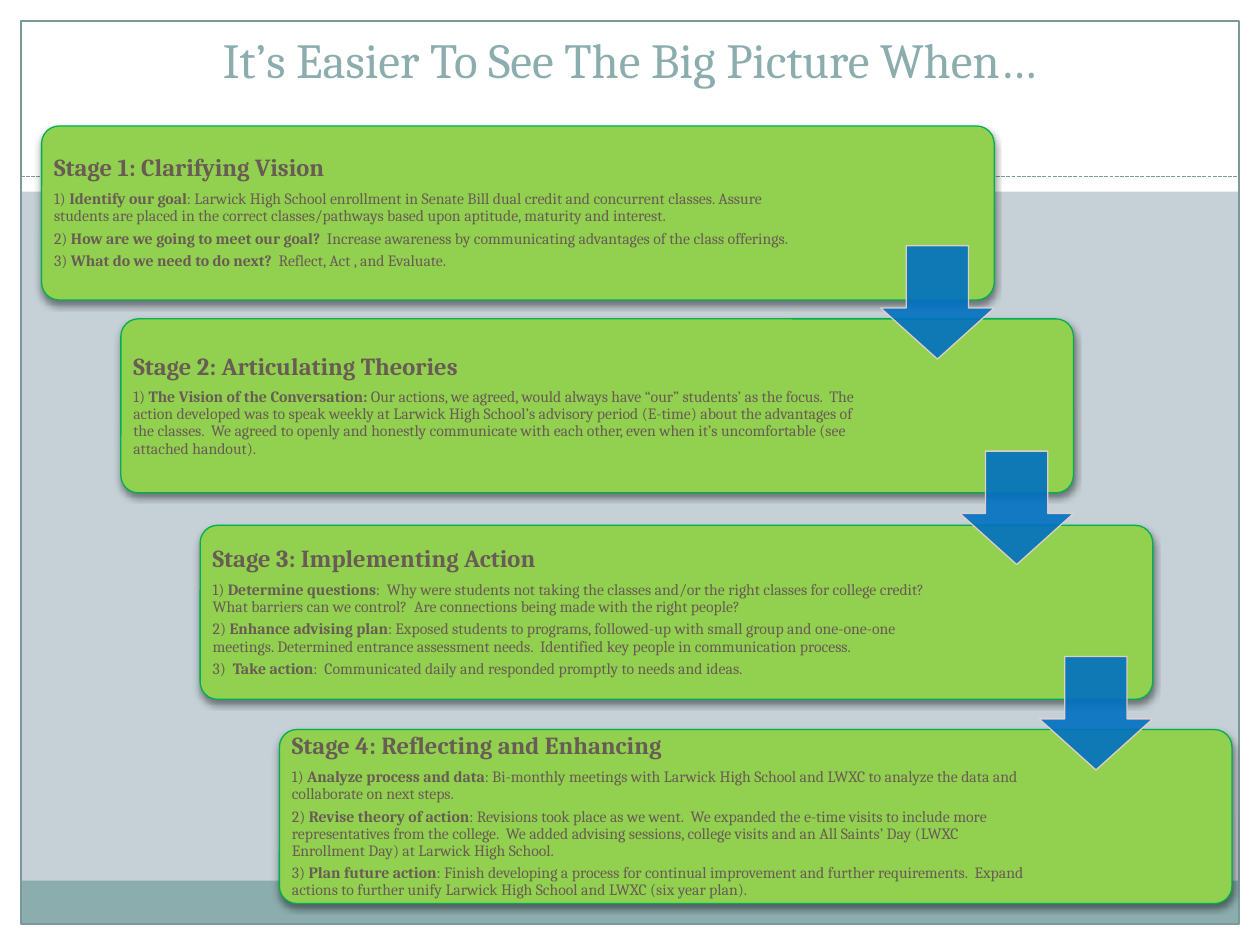
from dataclasses import dataclass

from lxml import etree
from pptx import Presentation
from pptx.dml.color import RGBColor
from pptx.enum import dml, shapes, text
from pptx.oxml import ns
from pptx.util import Pt


@dataclass(frozen=True)
class Theme:
    font: str = "Cambria"
    background: str = "C5D1D7"
    paper: str = "FFFFFF"
    accent: str = "8CADAE"
    frame: str = "7C999A"
    card: str = "92D050"
    card_edge: str = "00B050"
    arrow: str = "0070C0"
    arrow_edge: str = "EED3D0"
    ink: str = "695C54"
    shadow: str = "000000"
    title_size: float = 28
    heading_size: float = 14
    body_size: float = 9
    line_width: float = 0.75


def color(code):
    return RGBColor.from_string(code)


def add_span(para, words, *, font, size, ink, bold=False):
    span = para.add_run()
    span.text = words
    span.font.name = font
    span.font.size = Pt(size)
    span.font.bold = bold
    span.font.color.rgb = color(ink)


def child(parent, tag, **attributes):
    element = etree.SubElement(parent, ns.qn(tag))
    for name, value in attributes.items():
        element.set(name, str(value))
    return element


def set_alpha(fill_parent, percent):
    child(fill_parent.find(".//" + ns.qn("a:srgbClr")), "a:alpha", val=percent * 1000)


class SlideBuilder:
    def __init__(self, page, theme):
        self.page = page
        self.theme = theme
        page.background.fill.solid()
        page.background.fill.fore_color.rgb = color(theme.background)

    def shape(self, kind, left, top, width, height, fill=None, line=None):
        box = self.page.shapes.add_shape(kind, Pt(left), Pt(top), Pt(width), Pt(height))
        box.shadow.inherit = False
        if fill:
            box.fill.solid()
            box.fill.fore_color.rgb = color(fill)
        else:
            box.fill.background()
        if line:
            box.line.color.rgb = color(line)
            box.line.width = Pt(self.theme.line_width)
        else:
            box.line.fill.background()
        return box

    def panel(self, left, top, width, height, fill=None, line=None):
        return self.shape(shapes.MSO_SHAPE.RECTANGLE, left, top, width, height, fill, line)

    def rule(self, left, right, y):
        line = self.page.shapes.add_connector(
            shapes.MSO_CONNECTOR.STRAIGHT, Pt(left), Pt(y), Pt(right), Pt(y))
        line.line.color.rgb = color(self.theme.frame)
        line.line.width = Pt(self.theme.line_width)
        line.line.dash_style = dml.MSO_LINE.SQUARE_DOT
        child(line._element.spPr, "a:effectLst")

    def title(self, words, left, top, width, height):
        box = self.page.shapes.title
        box.left, box.top, box.width, box.height = Pt(left), Pt(top), Pt(width), Pt(height)
        frame = box.text_frame
        frame.auto_size = text.MSO_AUTO_SIZE.NONE
        frame.vertical_anchor = text.MSO_ANCHOR.BOTTOM
        para = frame.paragraphs[0]
        para.alignment = text.PP_ALIGN.CENTER
        add_span(para, words, font=self.theme.font, size=self.theme.title_size,
                 ink=self.theme.accent)
        box._element.getparent().append(box._element)

    def card(self, left, top, width, height):
        box = self.shape(shapes.MSO_SHAPE.ROUNDED_RECTANGLE, left, top, width, height,
                         self.theme.card, self.theme.card_edge)
        box.adjustments[0] = 0.1
        effects = box._element.spPr.find(ns.qn("a:effectLst"))
        shadow = child(effects, "a:outerShdw", blurRad=Pt(4), dist=Pt(2),
                       dir=90 * 60000, rotWithShape=0)
        child(shadow, "a:srgbClr", val=self.theme.shadow)
        set_alpha(shadow, 45)

    def stage_text(self, heading, points, left, top, width, height):
        box = self.page.shapes.add_textbox(Pt(left), Pt(top), Pt(width), Pt(height))
        frame = box.text_frame
        frame.word_wrap = True
        frame.vertical_anchor = text.MSO_ANCHOR.MIDDLE
        frame.margin_left = frame.margin_right = Pt(4.2)
        frame.margin_top = frame.margin_bottom = Pt(4.2)
        rows = [(self.theme.heading_size, ("", heading, ""))]
        rows += [(self.theme.body_size, point) for point in points]
        for index, (size, parts) in enumerate(rows):
            para = frame.add_paragraph() if index else frame.paragraphs[0]
            para.line_spacing = 0.9
            para.space_after = Pt(0.35 * size)
            for words, bold in zip(parts, (False, True, False)):
                if words:
                    add_span(para, words, font=self.theme.font, size=size,
                             ink=self.theme.ink, bold=bold)

    def arrow(self, left, top, size):
        box = self.shape(shapes.MSO_SHAPE.DOWN_ARROW, left, top, size, size,
                         self.theme.arrow, self.theme.arrow_edge)
        box.adjustments[0] = 0.55
        box.adjustments[1] = 0.45
        properties = box._element.spPr
        set_alpha(properties.find(ns.qn("a:solidFill")), 90)
        set_alpha(properties.find(ns.qn("a:ln")), 90)


STAGES = [
    (72, "Stage 1: Clarifying Vision", [
        ("1) ", "Identify our goal", ": Larwick High School enrollment in Senate Bill dual credit and concurrent classes. Assure students are placed in the correct classes/pathways based upon aptitude, maturity and interest."),
        ("2) ", "How are we going to meet our goal? ", " Increase awareness by communicating advantages of the class offerings."),
        ("3) ", "What do we need to do next?  ", "Reflect, Act , and Evaluate."),
    ]),
    (182.2, "Stage 2: Articulating Theories", [
        ("1) ", "The Vision of the Conversation: ", "Our actions, we agreed, would always have “our” students’ as the focus.  The action developed was to speak weekly at Larwick High School’s advisory period (E-time) about the advantages of the classes.  We agreed to openly and honestly communicate with each other, even when it’s uncomfortable (see attached handout)."),
    ]),
    (300.2, "Stage 3: Implementing Action", [
        ("1) ", "Determine questions", ":  Why were students not taking the classes and/or the right classes for college credit?  What barriers can we control?  Are connections being made with the right people?"),
        ("2) ", "Enhance advising plan", ": Exposed students to programs, followed-up with small group and one-one-one meetings. Determined entrance assessment needs.  Identified key people in communication process."),
        ("3)  ", "Take action", ":  Communicated daily and responded promptly to needs and ideas."),
    ]),
    (416.9, "Stage 4: Reflecting and Enhancing", [
        ("1) ", "Analyze process and data", ": Bi-monthly meetings with Larwick High School and LWXC to analyze the data and collaborate on next steps."),
        ("2) ", "Revise theory of action", ": Revisions took place as we went.  We expanded the e-time visits to include more representatives from the college.  We added advising sessions, college visits and an All Saints’ Day (LWXC Enrollment Day) at Larwick High School."),
        ("3) ", "Plan future action", ": Finish developing a process for continual improvement and further requirements.  Expand actions to further unify Larwick High School and LWXC (six year plan)."),
    ]),
]


def main():
    theme = Theme()
    width, height, edge = 720, 540, 12
    deck = Presentation()
    deck.slide_width, deck.slide_height = Pt(width), Pt(height)
    builder = SlideBuilder(deck.slides.add_slide(deck.slide_layouts[5]), theme)

    for area in [(0, height - edge, width, edge), (0, 0, width, 109.5),
                 (0, 0, edge, height), (width - edge, 0, edge, height)]:
        builder.panel(*area, fill=theme.paper)
    builder.panel(edge, 503.3, width - 2 * edge, 24.5, fill=theme.accent)
    builder.panel(edge, edge, width - 2 * edge, height - 2 * edge, line=theme.frame)
    builder.rule(edge, width - edge, 100.8)
    builder.title("It’s Easier To See The Big Picture When…", 43.2, 9.4, 633, 44.6)

    step = 45.3
    for index, (top, heading, points) in enumerate(STAGES):
        left = 23.8 + step * index
        builder.card(left, top, 544.3, 99.4)
        builder.stage_text(heading, points, left + 2.9, top + 2.9, 428.5, 93.6)
    for index in range(len(STAGES) - 1):
        builder.arrow(503.3 + step * index, 140.4 + 117.4 * index, 64.8)

    deck.save("out.pptx")


if __name__ == "__main__":
    main()
